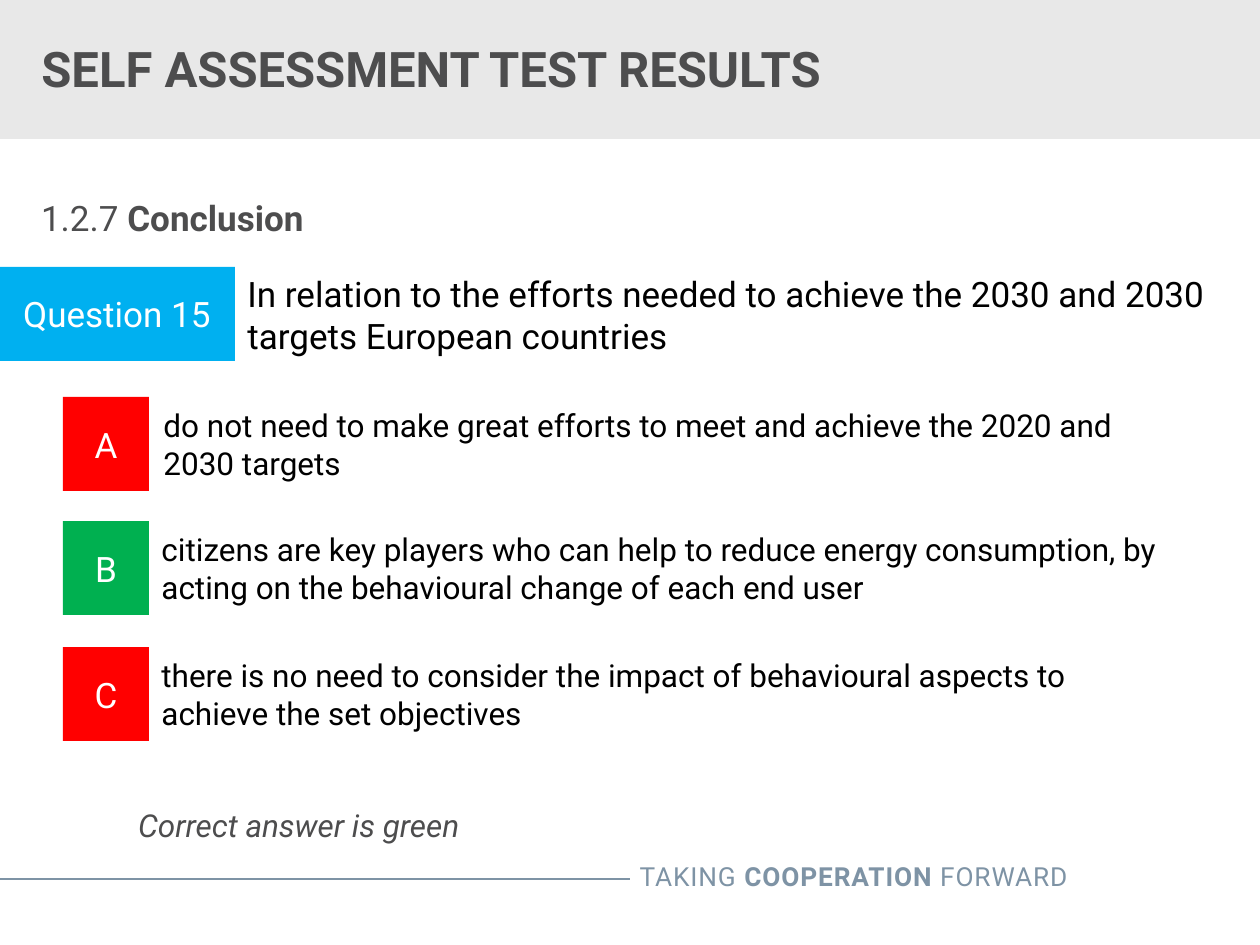
from pptx import Presentation
from pptx.dml.color import RGBColor
from pptx.enum.shapes import MSO_CONNECTOR, MSO_SHAPE
from pptx.enum.text import MSO_ANCHOR as Anchor, PP_ALIGN as Align
from pptx.oxml.ns import qn
from pptx.util import Emu, Pt
from lxml.etree import SubElement

EMU_PER_PX = 914400 / 126
FONT = "Roboto"
WHITE = RGBColor(0xFF, 0xFF, 0xFF)
BLACK = RGBColor(0x00, 0x00, 0x00)
DARK_GRAY = RGBColor(0x4D, 0x4D, 0x4E)
BAND_GRAY = RGBColor(0xE8, 0xE8, 0xE8)
SLATE = RGBColor(0x7E, 0x93, 0xA5)
BLUE = RGBColor(0x00, 0xB0, 0xF0)
RED = RGBColor(0xFF, 0x00, 0x00)
GREEN = RGBColor(0x00, 0xB0, 0x50)


def px(length):
    return Emu(round(length * EMU_PER_PX))


def write(frame, *parts, size=18, color=BLACK, bold=(), italic=False,
          align=Align.LEFT, anchor=Anchor.MIDDLE, spacing=None):
    """Fill a frame with one paragraph; bold lists the indexes of bold parts."""
    frame.word_wrap = True
    frame.vertical_anchor = anchor
    paragraph = frame.paragraphs[0]
    paragraph.alignment = align
    for index, part in enumerate(parts):
        run = paragraph.add_run()
        run.text = part
        font = run.font
        font.name, font.size = FONT, Pt(size)
        font.bold, font.italic = index in bold, italic
        font.color.rgb = color
        if spacing:
            run._r.get_or_add_rPr().set("spc", str(round(spacing * 100)))


class SlideBuilder:
    def __init__(self, slide):
        self.shapes = slide.shapes

    def block(self, left, top, width, height, fill, label=None):
        block = self.shapes.add_shape(MSO_SHAPE.RECTANGLE, px(left), px(top), px(width), px(height))
        block.shadow.inherit = False
        block.fill.solid()
        block.fill.fore_color.rgb = fill
        block.line.fill.background()
        if label:
            write(block.text_frame, label, size=20, color=WHITE, align=Align.CENTER)

    def text(self, left, top, width, height, *parts, inset=True, **style):
        frame = self.shapes.add_textbox(px(left), px(top), px(width), px(height)).text_frame
        if not inset:
            frame.margin_left = frame.margin_right = frame.margin_top = frame.margin_bottom = 0
        write(frame, *parts, **style)

    def rule(self, left, right, y, color):
        rule = self.shapes.add_connector(MSO_CONNECTOR.STRAIGHT, px(left), px(y), px(right), px(y))
        rule.line.color.rgb = color
        rule.line.width = Pt(0.75)
        SubElement(rule._element.spPr, qn("a:effectLst"))


def main():
    presentation = Presentation()
    presentation.slide_width, presentation.slide_height = px(1260), px(945)
    page = SlideBuilder(presentation.slides.add_slide(presentation.slide_layouts[6]))

    page.rule(-1, 630, 879, SLATE)
    page.block(0, 0, 1260, 139, BAND_GRAY)
    page.text(489, 854, 591, 44, "TAKING ", "COOPERATION", " FORWARD", size=15, color=SLATE,
              bold=(1,), align=Align.RIGHT, anchor=Anchor.TOP, spacing=0.5)

    page.text(29, 20, 878, 95, "SELF ASSESSMENT TEST RESULTS", size=28, color=DARK_GRAY, bold=(0,))
    page.text(41, 196, 1179, 43, "1.2.7 ", "Conclusion", inset=False, size=20,
              color=DARK_GRAY, bold=(1,), anchor=Anchor.TOP)

    row_height = 94
    page.block(-1, 267, 236, row_height, BLUE, "Question 15")
    page.text(235, 267, 1027, row_height,
              "In relation to the efforts needed to achieve the 2030 and 2030 targets "
              "European countries", size=20)

    answers = [
        ("A", 397, 151, RED, "do not need to make great efforts to meet and achieve the 2020 "
                             "and 2030 targets"),
        ("B", 521, 149, GREEN, "citizens are key players who can help to reduce energy consumption, "
                               "by acting on the behavioural change of each end user"),
        ("C", 647, 149, RED, "there is no need to consider the impact of behavioural aspects "
                             "to achieve the set objectives"),
    ]
    for letter, top, answer_left, verdict, answer in answers:
        page.block(63, top, 86, row_height, verdict, letter)
        page.text(answer_left, top, 1027, row_height, answer)

    page.text(138, 806, 500, 37, "Correct answer is green", inset=False,
              color=DARK_GRAY, italic=True, anchor=Anchor.TOP)

    presentation.save("out.pptx")


if __name__ == "__main__":
    main()
